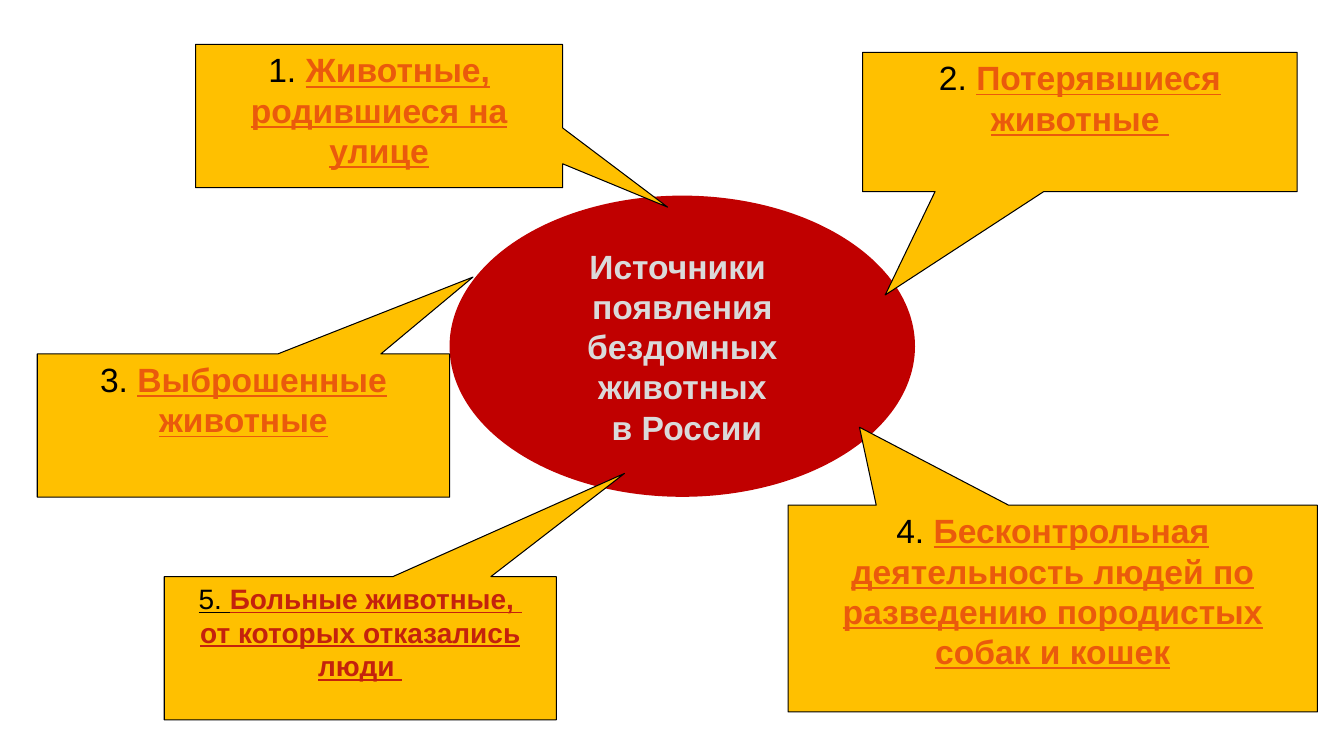
from dataclasses import dataclass

from pptx import Presentation
from pptx.dml.color import RGBColor
from pptx.enum.shapes import MSO_SHAPE
from pptx.enum.text import MSO_ANCHOR, PP_ALIGN
from pptx.util import Cm, Pt


@dataclass(frozen=True)
class Theme:
    font: str = "Arial"
    large: int = 24
    small: int = 20
    border: float = 0.75
    center_fill: str = "C00000"
    center_text: str = "DADADA"
    callout_fill: str = "FFC000"
    black: str = "000000"
    orange: str = "EA5A0C"
    red: str = "C4220D"


THEME = Theme()

CENTER_LINES = ["Источники ", "появления", " бездомных ", "животных\v в России"]

CALLOUTS = [
    ((4.93, 1.12, 9.25, 3.61), (0.786, 0.636), ["Животные, родившиеся на улице"]),
    ((21.74, 1.32, 10.95, 3.51), (-0.448, 1.242), ["Потерявшиеся животные "]),
    ((0.94, 8.92, 10.39, 3.61), (0.557, -1.037), ["Выброшенные животные"]),
    ((19.86, 12.73, 13.34, 5.21), (-0.365, -0.877),
     ["Бесконтрольная деятельность людей по разведению породистых собак и кошек"]),
    ((4.14, 14.53, 9.88, 3.61), (0.674, -1.22),
     ["Больные животные, ", "от которых отказались люди "]),
]


def add_filled_shape(s, kind, box, fill, anchor, wrap):
    sp = s.shapes.add_shape(kind, *(Cm(v) for v in box))
    sp.shadow.inherit = False
    sp.fill.solid()
    sp.fill.fore_color.rgb = RGBColor.from_string(fill)
    sp.text_frame.vertical_anchor = anchor
    sp.text_frame.word_wrap = wrap
    return sp


def format_run(r, size, color, bold=False, underline=False):
    r.font.name = THEME.font
    r.font.size = Pt(size)
    r.font.color.rgb = RGBColor.from_string(color)
    r.font.bold = bold
    r.font.underline = underline


def add_center(s):
    sp = add_filled_shape(s, MSO_SHAPE.OVAL, (11.33, 4.93, 11.73, 7.59),
                          THEME.center_fill, MSO_ANCHOR.MIDDLE, False)
    sp.line.fill.background()
    sp.text_frame.text = "\n".join(CENTER_LINES)
    for p in sp.text_frame.paragraphs:
        p.alignment = PP_ALIGN.CENTER
        for r in p.runs:
            format_run(r, THEME.large, THEME.center_text, bold=True)


def add_callout(s, number, box, tail, lines, size, color, number_underline):
    sp = add_filled_shape(s, MSO_SHAPE.RECTANGULAR_CALLOUT, box,
                          THEME.callout_fill, MSO_ANCHOR.TOP, True)
    sp.adjustments[0], sp.adjustments[1] = tail
    sp.line.color.rgb = RGBColor.from_string(THEME.black)
    sp.line.width = Pt(THEME.border)
    tf = sp.text_frame
    for i, line in enumerate(lines):
        p = tf.add_paragraph() if i else tf.paragraphs[0]
        p.alignment = PP_ALIGN.CENTER
        if i == 0:
            r = p.add_run()
            r.text = f"{number}. "
            format_run(r, size, THEME.black, underline=number_underline)
        r = p.add_run()
        r.text = line
        format_run(r, size, color, bold=True, underline=True)


def main():
    prs = Presentation()
    prs.slide_width, prs.slide_height = Cm(33.87), Cm(19.05)
    s = prs.slides.add_slide(prs.slide_layouts[6])
    add_center(s)
    for number, (box, tail, lines) in enumerate(CALLOUTS, 1):
        last = number == len(CALLOUTS)
        size = THEME.small if last else THEME.large
        color = THEME.red if last else THEME.orange
        add_callout(s, number, box, tail, lines, size, color, last)
    prs.save("out.pptx")


if __name__ == "__main__":
    main()
